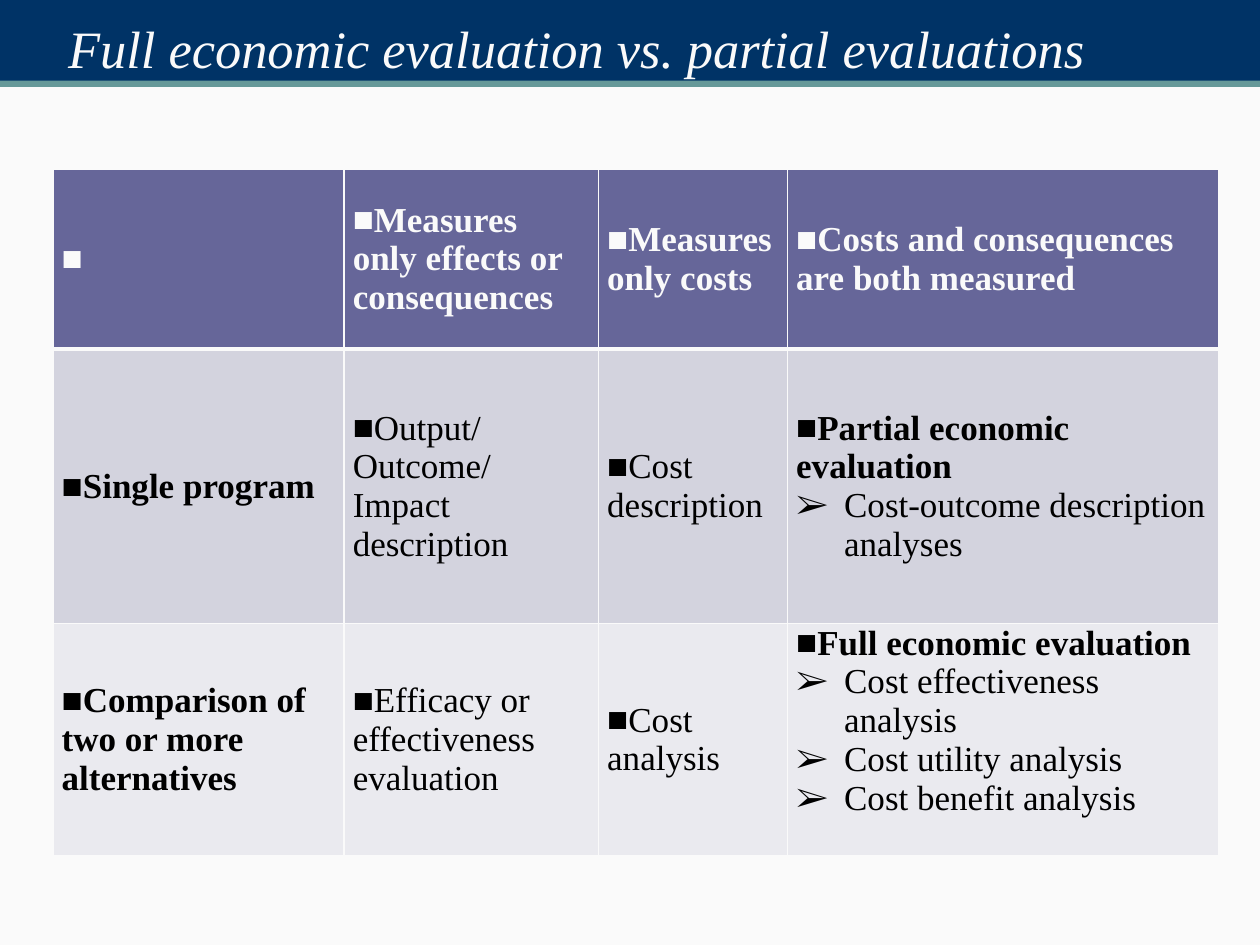
import pptx
import pptx.util
import pptx.dml.color
import pptx.enum.shapes
import pptx.enum.text
import pptx.oxml.ns
from lxml import etree

Inches, Pt = pptx.util.Inches, pptx.util.Pt
ANCHOR = pptx.enum.text.MSO_ANCHOR

# Content: each cell is a main line, optionally followed by arrow items
TITLE = "Full economic evaluation vs. partial evaluations"
ROWS = [
    [[" "], ["Measures only effects or consequences"],
     ["Measures only costs"], ["Costs and consequences are both measured"]],
    [["Single program"], ["Output/ Outcome/ Impact description"], ["Cost description"],
     ["Partial economic evaluation", "Cost-outcome description analyses"]],
    [["Comparison of two or more alternatives"],
     ["Efficacy or effectiveness evaluation"], ["Cost analysis"],
     ["Full economic evaluation", "Cost effectiveness analysis",
      "Cost utility analysis", "Cost benefit analysis"]],
]
COLUMN_WIDTHS = [2.31, 2.02, 1.5, 3.42]
ROW_HEIGHTS = [1.43, 2.18, 1.84]
COLORS = {"paper": "FAFAFA", "navy": "003366", "teal": "669999",
          "header": "666699", "ink": "000000"}
ROW_FILLS = [COLORS["header"], "D3D3DE", "EAEAEF"]
BANDS = [(0, 0.66, "navy"), (0.64, 0.05, "teal")]  # top, height, colour
FONT = "Times New Roman"


def rgb(value):
    return pptx.dml.color.RGBColor.from_string(value)


def add_element(parent, tag, **attributes):
    return etree.SubElement(parent, pptx.oxml.ns.qn(tag), attributes)


def set_font(paragraph, size, color, bold=False, italic=False):
    font = paragraph.font
    font.name, font.size, font.bold, font.italic = FONT, Pt(size), bold, italic
    font.color.rgb = rgb(color)


def set_bullet(paragraph, character, indent):
    properties = paragraph._p.get_or_add_pPr()
    properties.set("marL", str(Inches(indent)))
    properties.set("indent", str(-Inches(indent)))
    bullet_font = add_element(properties, "a:buFont", typeface=FONT)
    bullet = add_element(properties, "a:buChar", char=character)
    properties.insert(0, bullet_font)
    properties.insert(1, bullet)


def set_borders(cell, widths):
    """Draw left, right, top and bottom borders, given in points."""
    properties = cell._tc.get_or_add_tcPr()
    for position, (side, width) in enumerate(zip("LRTB", widths)):
        line = add_element(properties, "a:ln" + side, w=str(Pt(width)))
        fill = add_element(line, "a:solidFill")
        add_element(fill, "a:srgbClr", val=COLORS["paper"])
        properties.insert(position, line)


def fill_cell(cell, lines, row, column):
    cell.margin_left = cell.margin_right = Inches(0.07)
    cell.margin_top = cell.margin_bottom = 0
    # The longest list starts at the top of its cell
    cell.vertical_anchor = ANCHOR.TOP if len(lines) > 2 else ANCHOR.MIDDLE
    cell.fill.solid()
    cell.fill.fore_color.rgb = rgb(ROW_FILLS[row])
    set_borders(cell, (1, 1, 3 if row == 1 else 1, 3 if row == 0 else 1))
    color = COLORS["paper" if row == 0 else "ink"]
    cell.text = "\n".join(lines)
    for index, paragraph in enumerate(cell.text_frame.paragraphs):
        heading = index == 0 and (row == 0 or column in (0, 3))
        set_font(paragraph, 20, color, bold=heading)
        set_bullet(paragraph, "➢" if index else "■", 0.38 if index else 0)


presentation = pptx.Presentation()
presentation.slide_width, presentation.slide_height = Inches(10), Inches(7.5)
slide = presentation.slides.add_slide(presentation.slide_layouts[5])
slide.background.fill.solid()
slide.background.fill.fore_color.rgb = rgb(COLORS["paper"])

# Header bands
for top, height, color in BANDS:
    band = slide.shapes.add_shape(
        pptx.enum.shapes.MSO_SHAPE.RECTANGLE, 0, Inches(top),
        presentation.slide_width, Inches(height))
    band.shadow.inherit = False
    band.fill.solid()
    band.fill.fore_color.rgb = rgb(COLORS[color])
    band.line.fill.background()

# Title, brought in front of the bands
title = slide.shapes.title
slide.shapes._spTree.append(title._element)
title.left, title.top = Inches(0.44), Inches(0.2)
title.width, title.height = Inches(9.18), Inches(0.48)
title.text = TITLE
title.text_frame.auto_size = pptx.enum.text.MSO_AUTO_SIZE.NONE
title.text_frame.vertical_anchor = ANCHOR.BOTTOM
title_paragraph = title.text_frame.paragraphs[0]
title_paragraph.alignment = pptx.enum.text.PP_ALIGN.LEFT
set_font(title_paragraph, 30, COLORS["paper"], italic=True)

# Comparison table
table = slide.shapes.add_table(
    len(ROWS), len(COLUMN_WIDTHS), Inches(0.42), Inches(1.34),
    Inches(sum(COLUMN_WIDTHS)), Inches(sum(ROW_HEIGHTS))).table
for column, width in zip(table.columns, COLUMN_WIDTHS):
    column.width = Inches(width)
for row, height in zip(table.rows, ROW_HEIGHTS):
    row.height = Inches(height)
for row, cells in enumerate(ROWS):
    for column, lines in enumerate(cells):
        fill_cell(table.cell(row, column), lines, row, column)

presentation.save("out.pptx")
